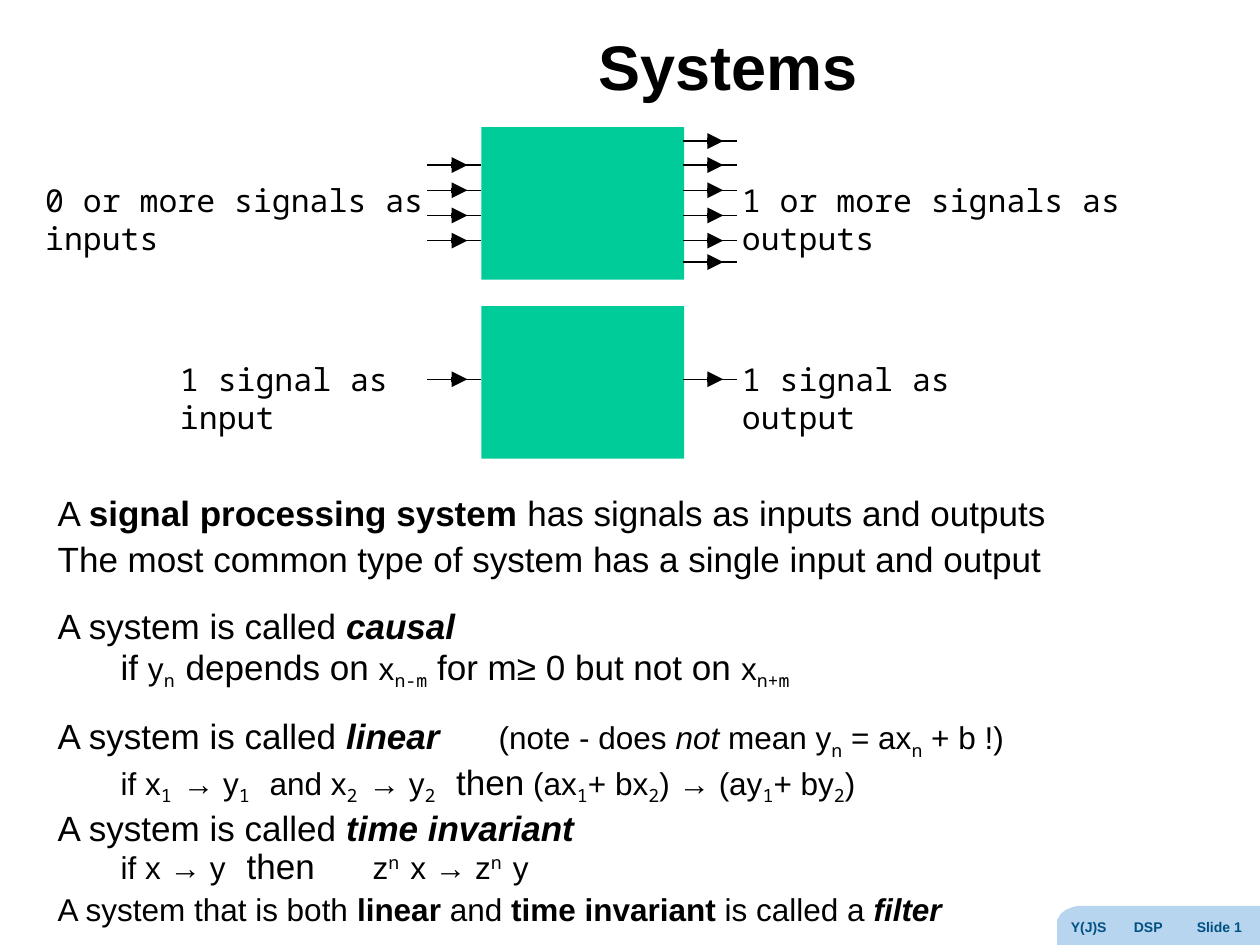
from lxml import etree
from pptx import Presentation
from pptx.dml.color import RGBColor
from pptx.enum.shapes import MSO_CONNECTOR, MSO_SHAPE
from pptx.enum.text import MSO_ANCHOR, MSO_AUTO_SIZE, PP_ALIGN
from pptx.oxml.ns import qn
from pptx.util import Inches, Pt

STRAIGHT = MSO_CONNECTOR.STRAIGHT
RECTANGLE = MSO_SHAPE.RECTANGLE
MIDDLE = MSO_ANCHOR.MIDDLE
NO_AUTOFIT = MSO_AUTO_SIZE.NONE
CENTER = PP_ALIGN.CENTER

BLACK = RGBColor(0x00, 0x00, 0x00)
GREEN = RGBColor(0x00, 0xCC, 0x99)
PALE_BLUE = RGBColor(0xB7, 0xD5, 0xEF)
NAVY = RGBColor(0x00, 0x50, 0x81)

SANS = "Arial"
MONO = "Noto Sans Mono"

INPUT_COLUMN, BLOCK_COLUMN, OUTPUT_COLUMN = 3.39, 3.82, 5.42
LABEL_COLUMN = 5.79
BLOCK_WIDTH, BLOCK_HEIGHT = 1.61, 1.21
WIRE_LENGTH = BLOCK_COLUMN - INPUT_COLUMN
HEAD_START, HEAD_END = 0.19, 0.32
LABEL_HEIGHT = 0.4

SPACE_BEFORE = Pt(2.3)
HANGING = (0.46, -0.46)
NESTED = (0.96, -0.46)
FLUSH = (0, 0)

STYLES = {
    "plain": {},
    "bold": {"bold": True},
    "term": {"bold": True, "italic": True},
    "small": {"size": 18},
    "small italic": {"size": 18, "italic": True},
    "sub": {"size": 18, "font": MONO, "baseline": -25},
    "sup": {"size": 18, "font": MONO, "baseline": 30},
}

BODY = [
    (HANGING, 1, [], [("A ", "plain"), ("signal processing system", "bold"),
                      (" has signals as inputs and outputs", "plain")]),
    (HANGING, 1, [], [("The most common type of system has a single input and output", "plain")]),
    (HANGING, 1.5, [], [("A system is called ", "plain"), ("causal", "term")]),
    (NESTED, 0.8, [], [("if ", "plain"), ("y", "small"), ("n ", "sub"), ("depends on ", "plain"),
                       ("x", "small"), ("n-m", "sub"), (" for m≥ 0 but not on ", "plain"),
                       ("x", "small"), ("n+m", "sub")]),
    (FLUSH, 1.5, [3.35], [("A system is called ", "plain"), ("linear", "term"),
                          ("\t(note - does ", "small"), ("not", "small italic"),
                          (" mean y", "small"), ("n", "sub"), (" = ax", "small"),
                          ("n", "sub"), (" + b !)", "small")]),
    (FLUSH, 0.8, [0.55], [("\tif x", "small"), ("1 ", "sub"), ("→ y", "small"), ("1 ", "sub"),
                          (" and x", "small"), ("2 ", "sub"), ("→ y", "small"), ("2 ", "sub"),
                          (" then", "plain"), (" (ax", "small"), ("1", "sub"), ("+ bx", "small"),
                          ("2", "sub"), (")", "small"), (" → (ay", "small"), ("1", "sub"),
                          ("+ by", "small"), ("2", "sub"), (")", "small")]),
    (HANGING, 1, [], [("A system is called ", "plain"), ("time invariant", "term")]),
    (FLUSH, 0.8, [0.55, 1.78, 2.45], [("\tif x → y", "small"), ("\tthen", "plain"), ("\tz", "small"),
                                      ("n ", "sup"), ("x → z", "small"), ("n ", "sup"),
                                      ("y", "small")]),
    (HANGING, 1, [], [("A system that is both ", "small"), ("linear", "small bold"),
                      (" and ", "small"), ("time invariant", "small bold"),
                      (" is called a ", "small"), ("filter", "small term")]),
]
STYLES["small bold"] = {"size": 18, "bold": True}
STYLES["small term"] = {"size": 18, "bold": True, "italic": True}


def add_run(paragraph, text, size=20, font=SANS, color=BLACK, bold=False, italic=False, baseline=0):
    run = paragraph.add_run()
    run.text = text
    run.font.size = Pt(size)
    run.font.name = font
    run.font.color.rgb = color
    run.font.bold = bold
    run.font.italic = italic
    if baseline:
        run.font._element.set("baseline", str(baseline * 1000))


def add_text_box(shapes, left, top, width, height):
    shape = shapes.add_textbox(Inches(left), Inches(top), Inches(width), Inches(height))
    shape.text_frame.word_wrap = True
    return shape.text_frame


def set_layout(paragraph, indent, tabs):
    properties = paragraph._p.get_or_add_pPr()
    margin, first_line = indent
    properties.set("marL", str(Inches(margin)))
    properties.set("indent", str(Inches(first_line)))
    if tabs:
        tab_list = etree.SubElement(properties, qn("a:tabLst"))
        for position in tabs:
            etree.SubElement(tab_list, qn("a:tab"), pos=str(Inches(position)), algn="l")


def add_line(shapes, start, end, y, width):
    line = shapes.add_connector(STRAIGHT, Inches(start), Inches(y), Inches(end), Inches(y))
    line.line.color.rgb = BLACK
    line.line.width = Pt(width)
    etree.SubElement(line._element.spPr, qn("a:effectLst"))
    return line


def add_wire(shapes, left, y):
    add_line(shapes, left, left + WIRE_LENGTH, y, 0.75)
    head = add_line(shapes, left + HEAD_START, left + HEAD_END, y, 3)
    etree.SubElement(head.line._get_or_add_ln(), qn("a:tailEnd"), type="triangle")


def add_label(shapes, text, left, top, width):
    frame = add_text_box(shapes, left, top, width, LABEL_HEIGHT)
    add_run(frame.paragraphs[0], text, size=18, font=MONO)


def add_system(slide, top, input_rows, output_rows, input_label, output_label):
    shapes = slide.shapes.add_group_shape().shapes
    block = shapes.add_shape(RECTANGLE, Inches(BLOCK_COLUMN), Inches(top),
                             Inches(BLOCK_WIDTH), Inches(BLOCK_HEIGHT))
    block.shadow.inherit = False
    block.fill.solid()
    block.fill.fore_color.rgb = GREEN
    block.line.fill.background()
    for column, rows in ((INPUT_COLUMN, input_rows), (OUTPUT_COLUMN, output_rows)):
        for row in rows:
            add_wire(shapes, column, top + row)
    for text, left, width in (input_label, output_label):
        add_label(shapes, text, left, top + 0.38, width)


def add_title(slide, text):
    title = slide.shapes.title
    title.left, title.top = Inches(2.12), Inches(0.11)
    title.width, title.height = Inches(7.31), Inches(0.89)
    frame = title.text_frame
    frame.auto_size = NO_AUTOFIT
    frame.vertical_anchor = MIDDLE
    paragraph = frame.paragraphs[0]
    paragraph.alignment = CENTER
    paragraph.line_spacing = 0.9
    add_run(paragraph, text, size=36, bold=True)


def add_body(slide):
    frame = add_text_box(slide.shapes, 0.36, 3.85, 8.83, 3.44)
    for index, (indent, spacing, tabs, runs) in enumerate(BODY):
        paragraph = frame.add_paragraph() if index else frame.paragraphs[0]
        paragraph.line_spacing = spacing
        paragraph.space_before = SPACE_BEFORE
        set_layout(paragraph, indent, tabs)
        for text, style in runs:
            add_run(paragraph, text, **STYLES[style])


def add_footer(slide):
    outline = [(10, 7.5), (8.39, 7.5), (8.39, 7.34), (8.39, 7.3), (8.42, 7.25),
               (8.46, 7.22), (8.51, 7.2), (8.55, 7.19)]
    builder = slide.shapes.build_freeform(Inches(10), Inches(7.19))
    builder.add_line_segments([(Inches(x), Inches(y)) for x, y in outline], close=True)
    tab = builder.convert_to_shape()
    tab.shadow.inherit = False
    tab.fill.solid()
    tab.fill.fore_color.rgb = PALE_BLUE
    tab.line.fill.background()
    paragraph = add_text_box(slide.shapes, 8.4, 7.24, 1.6, 0.26).paragraphs[0]
    set_layout(paragraph, FLUSH, [0.38, 0.76])
    add_run(paragraph, "Y(J)S\tDSP\tSlide 1", size=8, color=NAVY, bold=True)


def main():
    presentation = Presentation()
    presentation.slide_width, presentation.slide_height = Inches(10), Inches(7.5)
    slide = presentation.slides.add_slide(presentation.slide_layouts[5])
    add_footer(slide)
    add_title(slide, "Systems")
    add_body(slide)
    shared_rows = [0.3 + 0.2 * step for step in range(4)]
    add_system(slide, 1.01, shared_rows, [0.11, *shared_rows, 1.07],
               ("0 or more signals as inputs", 0.26, 3.32),
               ("1 or more signals as outputs", LABEL_COLUMN, 3.36))
    add_system(slide, 2.43, [0.58], [0.58],
               ("1 signal as input", 1.33, 2.15),
               ("1 signal as output", LABEL_COLUMN, 2.24))
    presentation.save("out.pptx")


if __name__ == "__main__":
    main()
